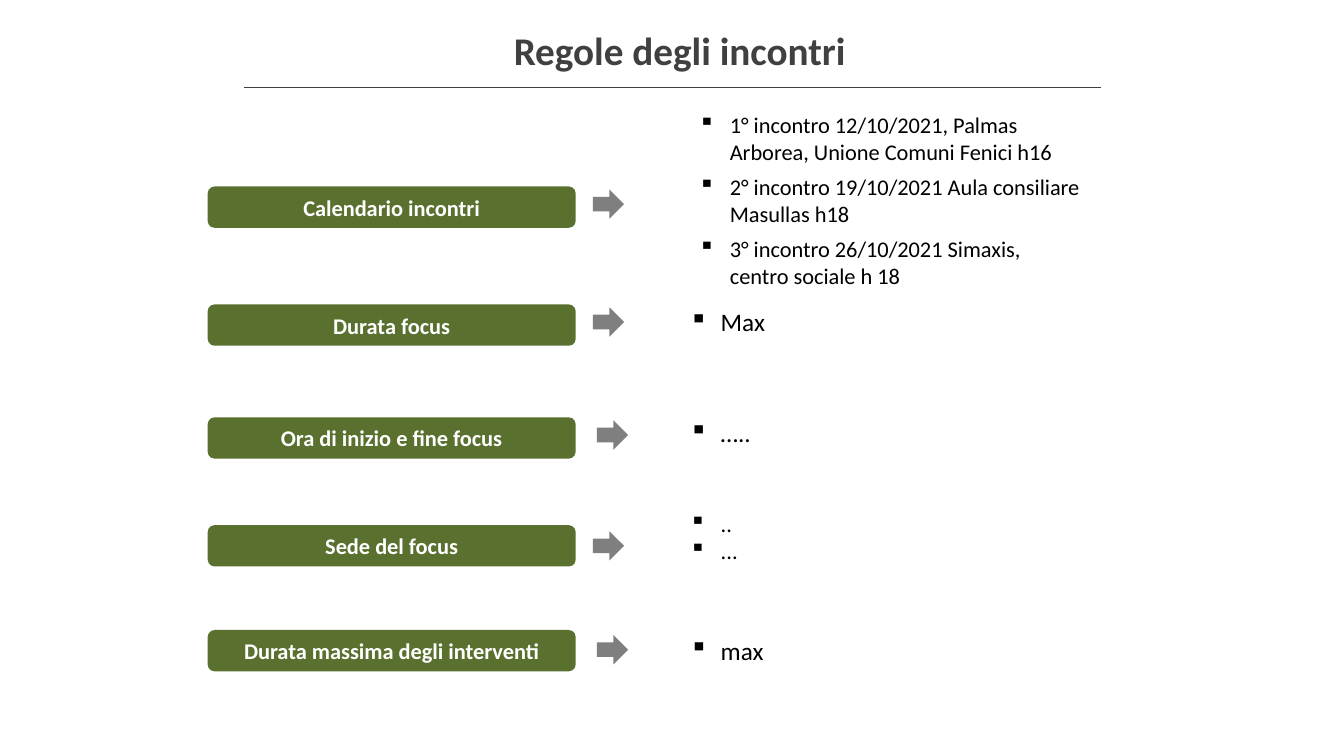
"""Build the slide with the rules of the meetings."""
from lxml import etree
from pptx import Presentation
from pptx import util as u
from pptx.dml.color import RGBColor
from pptx.enum import shapes, text
from pptx.oxml import ns

GREEN = RGBColor(0x5A, 0x70, 0x2E)
GRAY = RGBColor(0x7F, 0x7F, 0x7F)
DARK = RGBColor(0x40, 0x40, 0x40)
WHITE = RGBColor(0xFF, 0xFF, 0xFF)
BLACK = RGBColor(0, 0, 0)
KIND = shapes.MSO_SHAPE
LEFT, MID = text.PP_ALIGN.LEFT, text.PP_ALIGN.CENTER
TOP, CORE = text.MSO_ANCHOR.TOP, text.MSO_ANCHOR.MIDDLE


def write(frame, lines, size=16, color=BLACK, bold=False, align=LEFT,
          anchor=TOP, after=0, dent=None):
    frame.word_wrap = True
    frame.auto_size = text.MSO_AUTO_SIZE.NONE
    frame.vertical_anchor = anchor
    for i, line in enumerate(lines):
        para = frame.add_paragraph() if i else frame.paragraphs[0]
        para.alignment = align
        para.space_after = u.Pt(after)
        run = para.add_run()
        run.text = line
        font = run.font
        font.name, font.size, font.bold = "Calibri", u.Pt(size), bold
        font.color.rgb = color
        if dent:
            props = para._p.get_or_add_pPr()
            props.set("marL", str(u.Inches(dent)))
            props.set("indent", str(u.Inches(-0.31)))
            tint = etree.SubElement(props, ns.qn("a:buClr"))
            etree.SubElement(tint, ns.qn("a:srgbClr"), val=str(BLACK))
            etree.SubElement(props, ns.qn("a:buChar"), char="▪")


class Deck:
    def __init__(self):
        self.show = Presentation()
        self.show.slide_width = u.Inches(13.33)
        self.show.slide_height = u.Inches(7.5)
        self.slide = self.show.slides.add_slide(self.show.slide_layouts[5])

    def title(self, line, *box):
        head = self.slide.shapes.title
        head.left, head.top, head.width, head.height = map(u.Inches, box)
        write(head.text_frame, [line], size=28, color=DARK, bold=True, align=MID)

    def shape(self, kind, fill, *box):
        item = self.slide.shapes.add_shape(kind, *map(u.Inches, box))
        item.shadow.inherit = False
        item.fill.solid()
        item.fill.fore_color.rgb = fill
        item.line.fill.background()
        return item

    def label(self, line, x, y):
        pill = self.shape(KIND.ROUNDED_RECTANGLE, GREEN, x, y, 3.65, 0.41)
        write(pill.text_frame, [line], color=WHITE, bold=True, align=MID, anchor=CORE)

    def arrow(self, x, y):
        self.shape(KIND.RIGHT_ARROW, GRAY, x, y, 0.31, 0.29)

    def list(self, lines, *box, **style):
        item = self.slide.shapes.add_textbox(*map(u.Inches, box))
        write(item.text_frame, lines, **style)

    def rule(self, *ends):
        line = self.slide.shapes.add_connector(
            shapes.MSO_CONNECTOR.STRAIGHT, *map(u.Inches, ends))
        line.line.color.rgb = DARK
        line.line.width = u.Pt(0.75)
        etree.SubElement(line._element.spPr, ns.qn("a:effectLst"))


DATES = ["1° incontro 12/10/2021, Palmas Arborea, Unione Comuni Fenici h16",
         "2° incontro 19/10/2021 Aula consiliare Masullas h18",
         "3° incontro 26/10/2021 Simaxis, centro sociale h 18"]
ROWS = [
    ("Calendario incontri", 1.85, 5.88, 1.88, DATES,
     (6.82, 1.05, 4.02, 2.24), dict(after=6, dent=0.32)),
    ("Durata focus", 3.02, 5.88, 3.05, ["Max"],
     (6.74, 2.99, 5.6, 0.7), dict(size=18, dent=0.31)),
    ("Ora di inizio e fine focus", 4.14, 5.92, 4.17, ["….."],
     (6.74, 4.09, 5.34, 0.4), dict(size=18, dent=0.31)),
    ("Sede del focus", 5.21, 5.88, 5.27, ["..", "..."],
     (6.74, 5.01, 5.75, 0.63), dict(dent=0.31)),
    ("Durata massima degli interventi", 6.25, 5.92, 6.3, ["max"],
     (6.74, 6.25, 4.11, 0.4), dict(size=18, dent=0.31)),
]


def main():
    deck = Deck()
    deck.title("Regole degli incontri", 2.49, 0.21, 8.5, 0.78)
    for name, top, tip, high, lines, box, style in ROWS:
        deck.arrow(tip, high)
        deck.label(name, 2.06, top)
        deck.list(lines, *box, **style)
    deck.rule(2.42, 0.87, 10.92, 0.87)
    deck.show.save("out.pptx")


if __name__ == "__main__":
    main()
